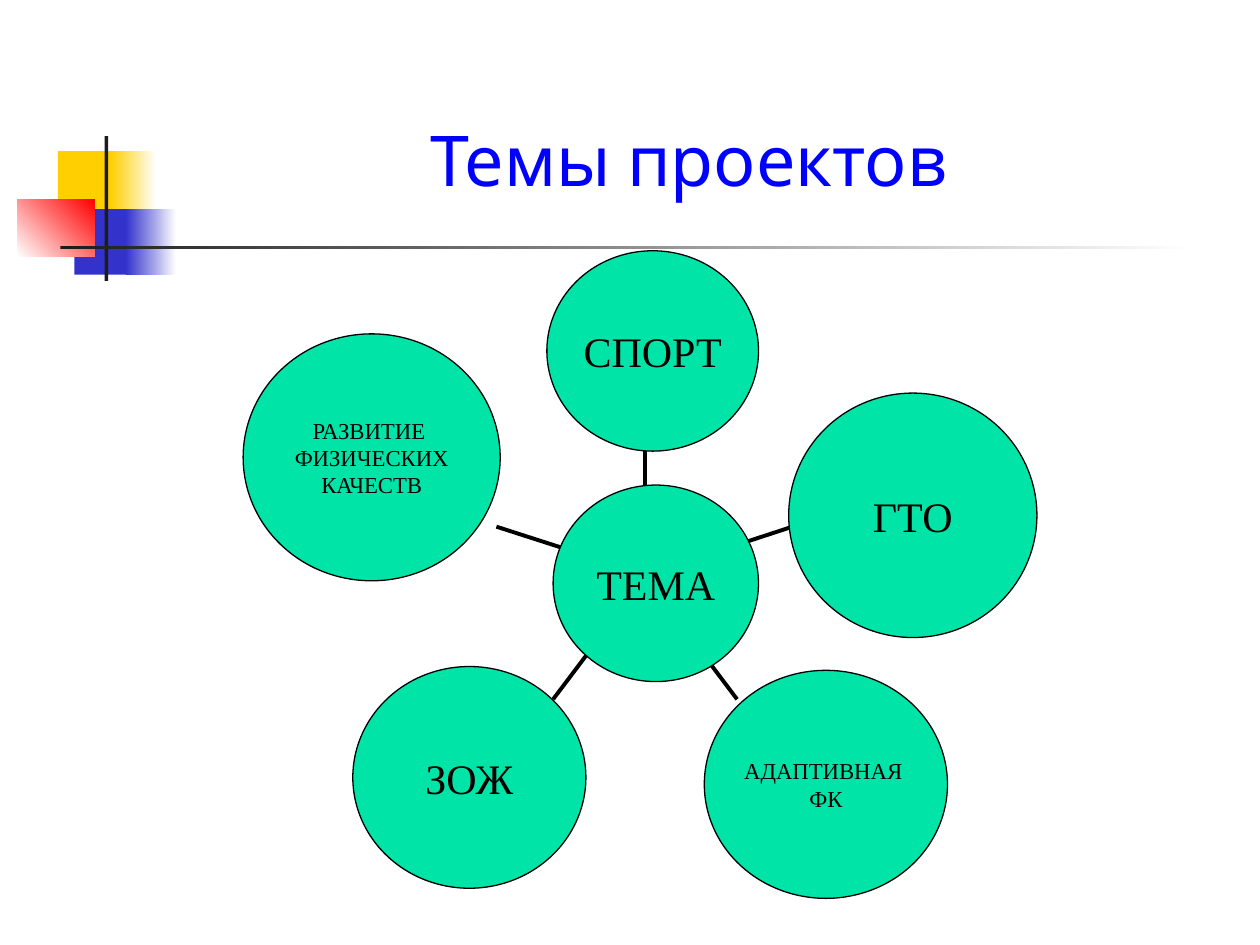
"""Build a slide of project themes arranged around a central circle."""
from lxml import etree
from pptx import Presentation
from pptx.dml.color import RGBColor
from pptx.enum.shapes import MSO_CONNECTOR, MSO_SHAPE
from pptx.enum.text import MSO_ANCHOR, MSO_AUTO_SIZE, PP_ALIGN
from pptx.oxml.ns import qn
from pptx.util import Inches, Pt

RECT, OVAL = MSO_SHAPE.RECTANGLE, MSO_SHAPE.OVAL
STRAIGHT = MSO_CONNECTOR.STRAIGHT
CENTER, MIDDLE, BOTTOM = PP_ALIGN.CENTER, MSO_ANCHOR.MIDDLE, MSO_ANCHOR.BOTTOM
NO_FIT = MSO_AUTO_SIZE.NONE

COLORS = {
    "yellow": "FFCF01", "indigo": "3333CC", "red": "FF0000", "dark": "1C1C1C",
    "white": "FFFFFF", "title": "0000FF", "circle": "00E4A8", "ink": "000000",
}
SLIDE_SIZE = (10, 7.5)
TITLE = "Темы проектов"
TITLE_BOX = (1.14, 0.65, 8.66, 0.99)

ORNAMENTS = [
    ((0.46, 1.2, 0.48, 0.52), ["yellow"], 0),
    ((0.88, 1.2, 0.36, 0.52), ["yellow", "white"], 0),
    ((0.59, 1.66, 0.46, 0.52), ["indigo"], 0),
    ((1, 1.66, 0.4, 0.52), ["indigo", "white"], 0),
    ((0.14, 1.58, 0.61, 0.46), ["white", "red"], 45),
    ((0.83, 1.08, 0.03, 1.15), ["dark"], 0),
    ((0.48, 1.95, 9, 0.03), ["dark", "white"], 0),
]
THEMES = [
    (["РАЗВИТИЕ ", "ФИЗИЧЕСКИХ", "КАЧЕСТВ"], 13,
     (1.93, 2.65, 2.04, 1.96), (4.53, 4.37, 3.94, 4.18)),
    (["ЗОЖ"], 24, (2.8, 5.29, 1.85, 1.76), (4.76, 5.06, 4.39, 5.55)),
    (["АДАПТИВНАЯ ", "ФК"], 13,
     (5.59, 5.32, 1.93, 1.81), (5.48, 5.06, 5.85, 5.55)),
    (["ГТО"], 24, (6.26, 3.12, 1.97, 1.94), (5.71, 4.37, 6.29, 4.18)),
    (["СПОРТ"], 24, (4.34, 1.99, 1.68, 1.59), (5.12, 3.95, 5.12, 3.33)),
    (["ТЕМА"], 24, (4.39, 3.85, 1.63, 1.56), None),
]
TITLE_FRAME = {"vertical_anchor": BOTTOM, "auto_size": NO_FIT, "word_wrap": True}
CIRCLE_FRAME = {
    "vertical_anchor": MIDDLE, "word_wrap": False,
    "margin_left": 0, "margin_right": 0, "margin_top": 0, "margin_bottom": 0,
}


def rgb(name):
    return RGBColor.from_string(COLORS[name])


def inches(lengths):
    return [Inches(length) for length in lengths]


def apply(target, formats):
    for attribute, value in formats.items():
        setattr(target, attribute, value)


def write(frame, lines, formats, font, size, color):
    apply(frame, formats)
    frame.text = "\n".join(lines)
    for paragraph in frame.paragraphs:
        paragraph.alignment = CENTER
        apply(paragraph.runs[0].font, {"name": font, "size": Pt(size)})
        paragraph.runs[0].font.color.rgb = rgb(color)


def add_ornament(slide, box, fills, angle):
    ornament = slide.shapes.add_shape(RECT, *inches(box))
    ornament.shadow.inherit = False
    ornament.line.fill.background()
    if len(fills) == 1:
        ornament.fill.solid()
        ornament.fill.fore_color.rgb = rgb(fills[0])
        return
    ornament.fill.gradient()
    ornament.fill.gradient_angle = angle
    for stop, name in zip(ornament.fill.gradient_stops, fills):
        stop.color.rgb = rgb(name)


def add_spoke(slide, ends):
    spoke = slide.shapes.add_connector(STRAIGHT, *inches(ends))
    spoke.line.color.rgb = rgb("ink")
    spoke.line.width = Pt(2.25)
    etree.SubElement(spoke._element.spPr, qn("a:effectLst"))


def add_circle(slide, lines, size, box):
    circle = slide.shapes.add_shape(OVAL, *inches(box))
    circle.shadow.inherit = False
    circle.fill.solid()
    circle.fill.fore_color.rgb = rgb("circle")
    circle.line.color.rgb = rgb("ink")
    circle.line.width = Pt(0.75)
    write(circle.text_frame, lines, CIRCLE_FRAME, "Times New Roman", size, "ink")


def main():
    deck = Presentation()
    deck.slide_width, deck.slide_height = inches(SLIDE_SIZE)
    slide = deck.slides.add_slide(deck.slide_layouts[5])
    for ornament in ORNAMENTS:
        add_ornament(slide, *ornament)
    heading = slide.shapes.title
    apply(heading, dict(zip(("left", "top", "width", "height"), inches(TITLE_BOX))))
    write(heading.text_frame, [TITLE], TITLE_FRAME, "Karla", 40, "title")
    for lines, size, box, spoke in THEMES:
        if spoke:
            add_spoke(slide, spoke)
        add_circle(slide, lines, size, box)
    deck.save("out.pptx")


if __name__ == "__main__":
    main()
